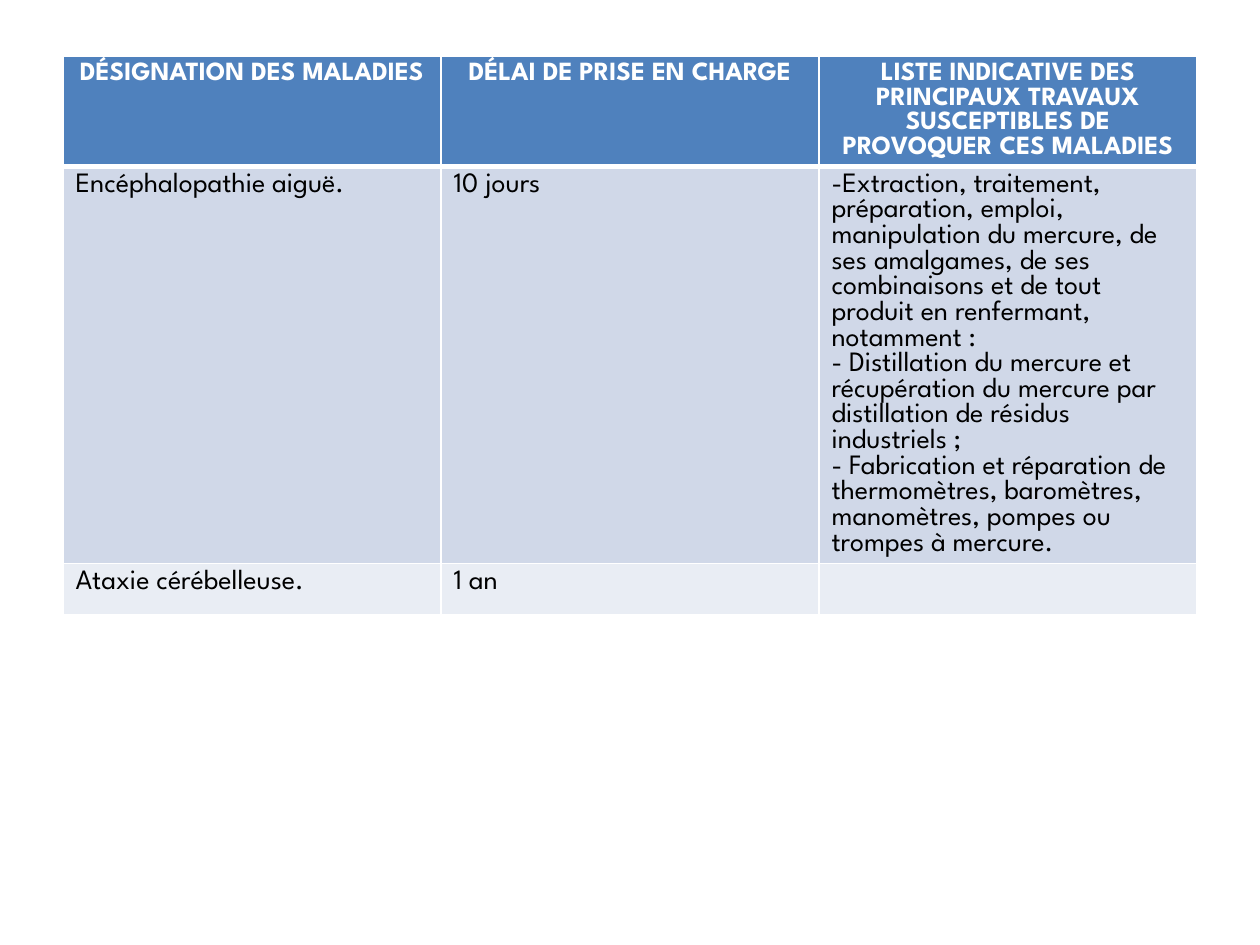
from dataclasses import dataclass

from lxml import etree
from pptx import Presentation
from pptx.dml.color import RGBColor
from pptx.enum import text
from pptx.oxml import ns
from pptx.util import Pt


@dataclass(frozen=True)
class Theme:
    font: str = "League Spartan"
    header_size: int = 15
    body_size: int = 16
    header_fill: str = "4F81BD"
    header_text: str = "FFFFFF"
    body_text: str = "000000"
    bands: tuple = ("D0D8E8", "E9EDF4")
    border: str = "FFFFFF"
    border_width: int = 1
    header_rule: int = 3


THEME = Theme()

HEADINGS = [
    "DÉSIGNATION DES MALADIES",
    "DÉLAI DE PRISE EN CHARGE",
    "LISTE INDICATIVE DES PRINCIPAUX TRAVAUX SUSCEPTIBLES DE PROVOQUER CES MALADIES",
]
WORKS = "\n".join([
    "-Extraction, traitement, préparation, emploi, manipulation du mercure, de ses amalgames, "
    "de ses combinaisons et de tout produit en renfermant, notamment :",
    "- Distillation du mercure et récupération du mercure par distillation de résidus industriels ;",
    "- Fabrication et réparation de thermomètres, baromètres, manomètres, pompes ou trompes à mercure.",
])
DISEASES = [
    ["Encéphalopathie aiguë.", "10 jours", WORKS],
    ["Ataxie cérébelleuse.", "1 an", ""],
]
ROW_HEIGHTS = [62.4, 226.8, 29.2]


def set_borders(cell, top, bottom):
    properties = cell._tc.get_or_add_tcPr()
    widths = {"L": THEME.border_width, "R": THEME.border_width, "T": top, "B": bottom}
    for position, (side, width) in enumerate(widths.items()):
        line = etree.Element(ns.qn(f"a:ln{side}"), w=str(Pt(width)))
        paint = etree.SubElement(line, ns.qn("a:solidFill"))
        etree.SubElement(paint, ns.qn("a:srgbClr"), val=THEME.border)
        properties.insert(position, line)


def fill_cell(cell, wording, fill, color, size, bold, alignment):
    cell.fill.solid()
    cell.fill.fore_color.rgb = RGBColor.from_string(fill)
    cell.text_frame.text = wording
    for paragraph in cell.text_frame.paragraphs:
        paragraph.alignment = alignment
        for run in paragraph.runs:
            run.font.name = THEME.font
            run.font.size = Pt(size)
            run.font.bold = bold
            run.font.color.rgb = RGBColor.from_string(color)


def add_disease_table(slide, left, top, width):
    rows = [HEADINGS, *DISEASES]
    frame = slide.shapes.add_table(
        len(rows), len(HEADINGS), Pt(left), Pt(top), Pt(width), Pt(sum(ROW_HEIGHTS)))
    diseases = frame.table
    for column in diseases.columns:
        column.width = Pt(width / len(HEADINGS))
    for index, (row, height) in enumerate(zip(rows, ROW_HEIGHTS)):
        diseases.rows[index].height = Pt(height)
        is_header = index == 0
        if is_header:
            style = (THEME.header_fill, THEME.header_text, THEME.header_size, True,
                     text.PP_ALIGN.CENTER)
        else:
            band = THEME.bands[(index - 1) % len(THEME.bands)]
            style = (band, THEME.body_text, THEME.body_size, False, text.PP_ALIGN.LEFT)
        above = THEME.header_rule if index == 1 else THEME.border_width
        below = THEME.header_rule if is_header else THEME.border_width
        for cell, wording in zip(diseases.rows[index].cells, row):
            fill_cell(cell, wording, *style)
            set_borders(cell, above, below)


def main():
    deck = Presentation()
    deck.slide_width, deck.slide_height = Pt(720), Pt(540)
    slide = deck.slides.add_slide(deck.slide_layouts[6])
    add_disease_table(slide, left=36, top=32, width=648)
    deck.save("out.pptx")


if __name__ == "__main__":
    main()
